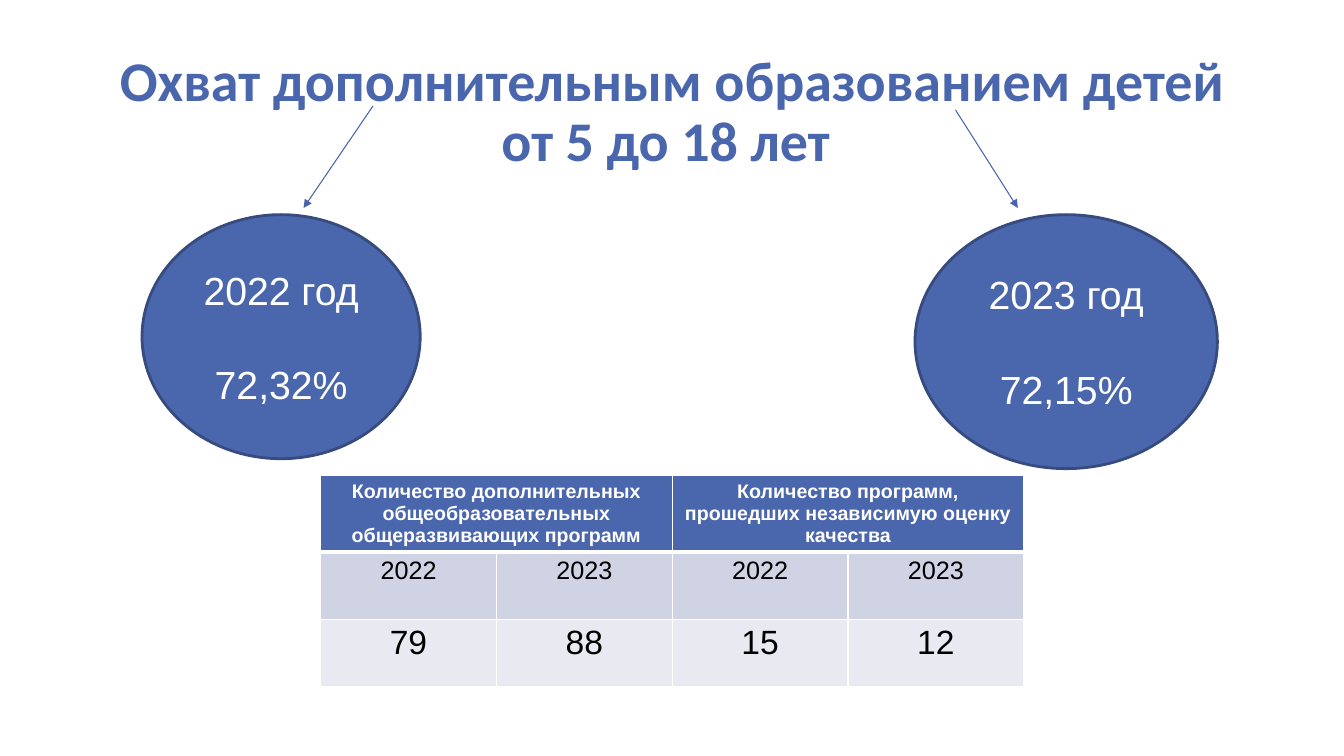
from dataclasses import dataclass

from lxml import etree
from pptx import Presentation
from pptx.dml.color import RGBColor
from pptx.enum.shapes import MSO_CONNECTOR, MSO_SHAPE
from pptx.enum.text import MSO_ANCHOR, PP_ALIGN
from pptx.oxml.ns import qn
from pptx.util import Cm, Pt

STRAIGHT = MSO_CONNECTOR.STRAIGHT
OVAL = MSO_SHAPE.OVAL
MIDDLE = MSO_ANCHOR.MIDDLE
CENTER = PP_ALIGN.CENTER
TITLE_ONLY = 5


@dataclass(frozen=True)
class Theme:
    accent: str = "4A66AC"
    outline: str = "374B7F"
    arrow: str = "4663AB"
    white: str = "FFFFFF"
    black: str = "000000"
    year_band: str = "D0D3E3"
    count_band: str = "E9EAF1"
    title_font: str = "Calibri"
    body_font: str = "Arial"
    title_size: int = 40
    oval_size: int = 28
    header_size: int = 14
    year_size: int = 18
    count_size: int = 24


THEME = Theme()


def color(value):
    return RGBColor.from_string(value)


def format_paragraph(paragraph, size, value, bold=False, name=THEME.body_font):
    paragraph.alignment = CENTER
    paragraph.font.name = name
    paragraph.font.size = Pt(size)
    paragraph.font.bold = bold
    paragraph.font.color.rgb = color(value)


def add_title(slide, box, text):
    title = slide.shapes.title
    title.left, title.top, title.width, title.height = map(Cm, box)
    frame = title.text_frame
    frame.text = text
    frame.word_wrap = True
    frame.vertical_anchor = MIDDLE
    paragraph = frame.paragraphs[0]
    paragraph.line_spacing = 0.9
    format_paragraph(paragraph, THEME.title_size, THEME.accent, True, THEME.title_font)


def add_year_oval(slide, box, year, share):
    oval = slide.shapes.add_shape(OVAL, *map(Cm, box))
    oval.shadow.inherit = False
    oval.fill.solid()
    oval.fill.fore_color.rgb = color(THEME.accent)
    oval.line.color.rgb = color(THEME.outline)
    oval.line.width = Pt(2)
    frame = oval.text_frame
    frame.word_wrap = True
    frame.vertical_anchor = MIDDLE
    frame.text = f"{year} год\n{share}"
    for paragraph in frame.paragraphs:
        format_paragraph(paragraph, THEME.oval_size, THEME.white)
    frame.paragraphs[1].space_before = Pt(34)


def add_arrow(slide, start, end):
    arrow = slide.shapes.add_connector(STRAIGHT, *map(Cm, start + end))
    arrow.line.color.rgb = color(THEME.arrow)
    arrow.line.width = Pt(0.75)
    properties = arrow._element.spPr
    etree.SubElement(properties.find(qn("a:ln")), qn("a:tailEnd"), type="triangle")
    etree.SubElement(properties, qn("a:effectLst"))


def set_borders(cell, bottom_width):
    properties = cell._tc.get_or_add_tcPr()
    widths = {"lnL": 1, "lnR": 1, "lnT": 1, "lnB": bottom_width}
    for position, (side, width) in enumerate(widths.items()):
        line = etree.Element(qn(f"a:{side}"), w=str(Pt(width)))
        fill = etree.SubElement(line, qn("a:solidFill"))
        etree.SubElement(fill, qn("a:srgbClr"), val=THEME.white)
        properties.insert(position, line)


def add_program_table(slide, box, headers, years, counts):
    left, top, width, height = box
    header_height = 1.92
    rows = [
        ([headers[0], "", headers[1], ""], THEME.accent, THEME.header_size, THEME.white),
        (years, THEME.year_band, THEME.year_size, THEME.black),
        (counts, THEME.count_band, THEME.count_size, THEME.black),
    ]
    table = slide.shapes.add_table(
        len(rows), len(years), Cm(left), Cm(top), Cm(width), Cm(height)
    ).table
    for column in table.columns:
        column.width = Cm(width / len(years))
    for index, (texts, fill, size, text_color) in enumerate(rows):
        is_header = index == 0
        row_height = header_height if is_header else (height - header_height) / 2
        table.rows[index].height = Cm(row_height)
        for cell, text in zip(table.rows[index].cells, texts):
            cell.text = text
            cell.fill.solid()
            cell.fill.fore_color.rgb = color(fill)
            format_paragraph(cell.text_frame.paragraphs[0], size, text_color, is_header)
            set_borders(cell, 3 if is_header else 1)
    for first in (0, 2):
        table.cell(0, first).merge(table.cell(0, first + 1))


def build_coverage_slide(presentation):
    slide = presentation.slides.add_slide(presentation.slide_layouts[TITLE_ONLY])
    add_title(
        slide,
        (2.33, 1.02, 29.21, 3.68),
        "Охват дополнительным образованием детей от 5 до 18 лет ",
    )
    add_year_oval(slide, (3.58, 5.41, 7.01, 6.15), "2022", "72,32%")
    add_year_oval(slide, (23.06, 5.41, 7.62, 6.4), "2023", "72,15%")
    add_arrow(slide, (9.4, 2.67), (7.65, 5.24))
    add_arrow(slide, (24.08, 2.77), (25.65, 5.24))
    add_program_table(
        slide,
        (8.08, 11.99, 17.72, 5.32),
        [
            "Количество дополнительных общеобразовательных общеразвивающих программ",
            "Количество программ, прошедших независимую оценку качества",
        ],
        ["2022", "2023"] * 2,
        ["79", "88", "15", "12"],
    )


def main():
    presentation = Presentation()
    presentation.slide_width = Cm(33.87)
    presentation.slide_height = Cm(19.05)
    build_coverage_slide(presentation)
    presentation.save("out.pptx")


if __name__ == "__main__":
    main()
